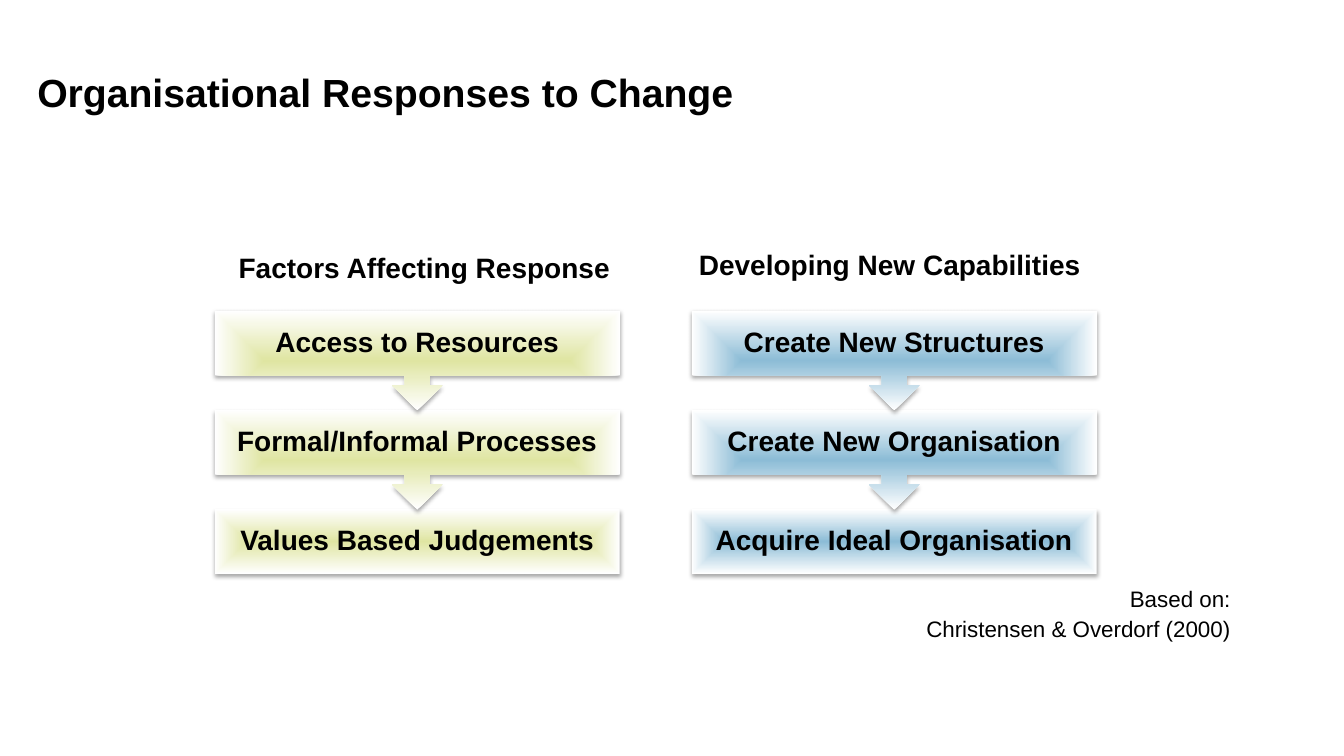
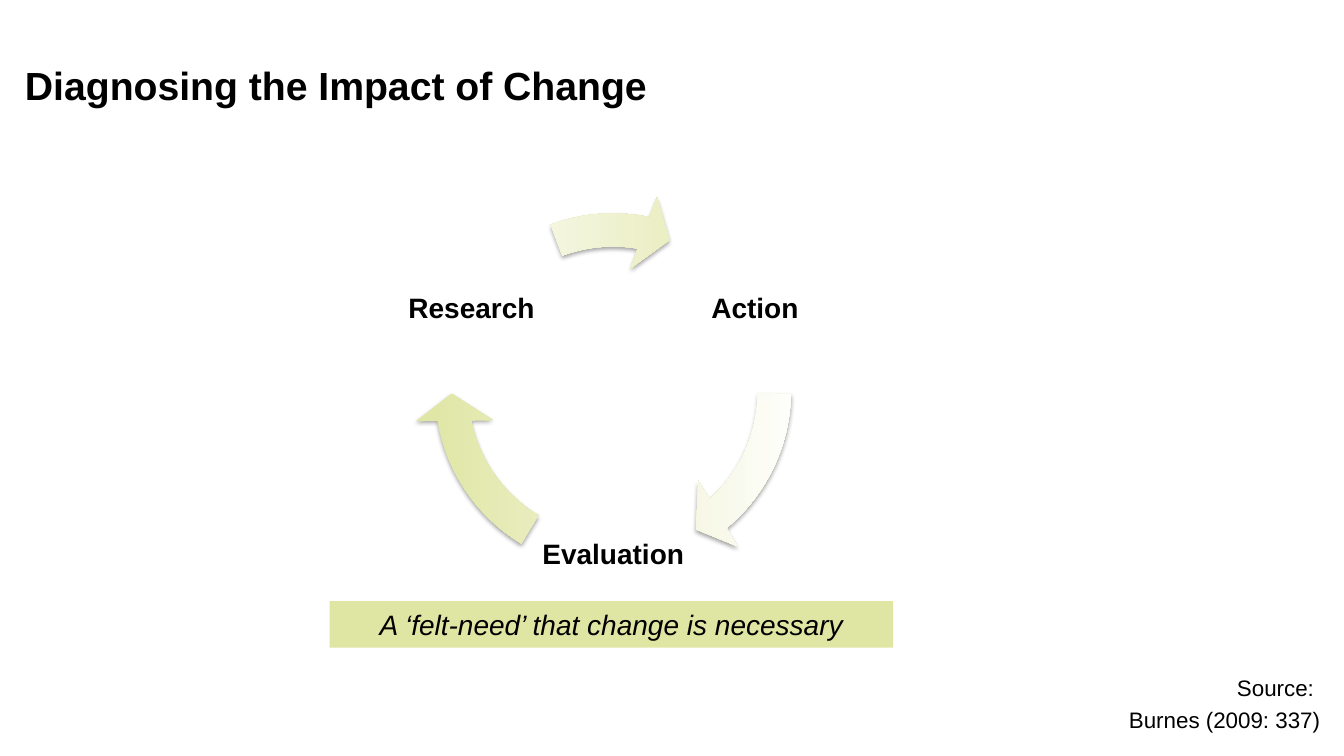
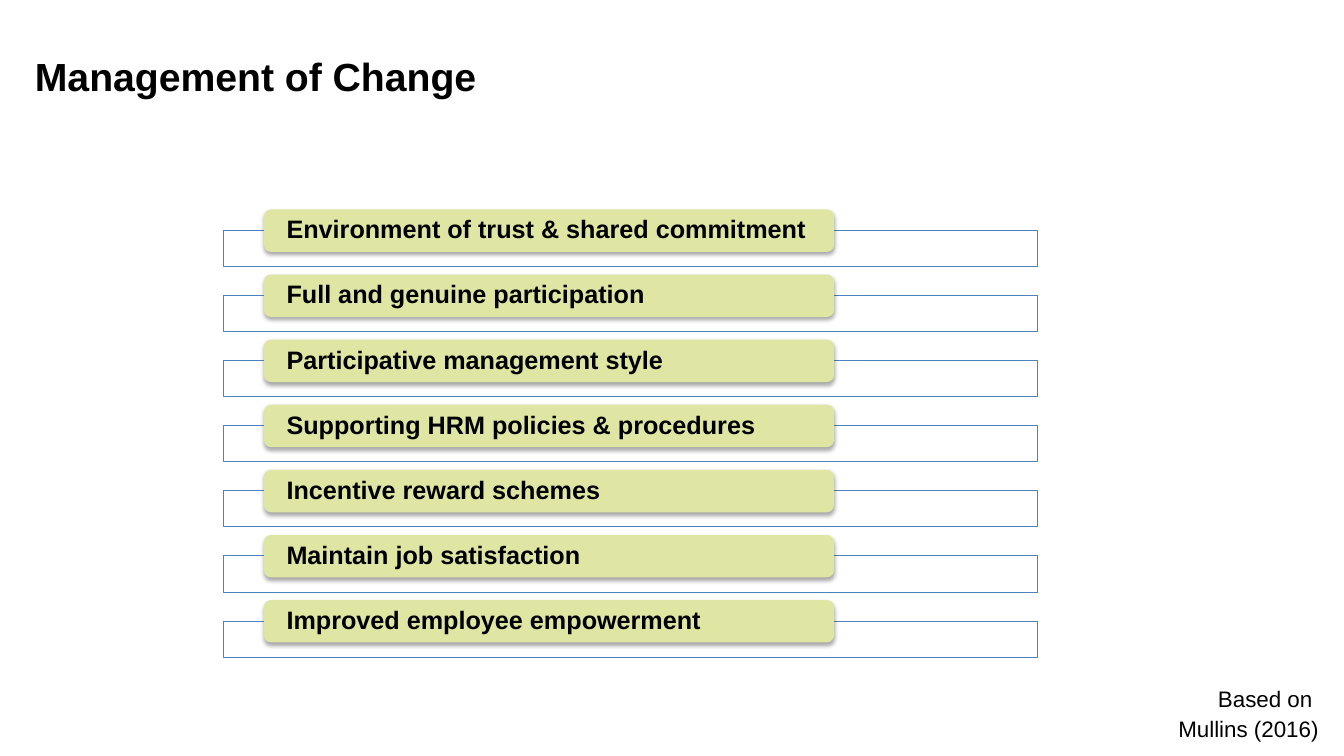
from dataclasses import dataclass
from typing import NamedTuple

from lxml import etree
from pptx import Presentation
from pptx.dml.color import RGBColor
from pptx.enum.shapes import MSO_SHAPE
from pptx.enum.text import MSO_ANCHOR, PP_ALIGN
from pptx.oxml.ns import qn
from pptx.util import Cm, Pt

RECT = MSO_SHAPE.RECTANGLE
ROUND = MSO_SHAPE.ROUNDED_RECTANGLE
CALL = MSO_SHAPE.UP_ARROW_CALLOUT
ARC = MSO_SHAPE.CIRCULAR_ARROW
LEFT, MID, RIGHT = PP_ALIGN.LEFT, PP_ALIGN.CENTER, PP_ALIGN.RIGHT
TOP, CENTRE = MSO_ANCHOR.TOP, MSO_ANCHOR.MIDDLE


# Theme
@dataclass(frozen=True)
class Theme:
    font: str = "Arial"
    ink: RGBColor = RGBColor(0x00, 0x00, 0x00)
    white: RGBColor = RGBColor(0xFF, 0xFF, 0xFF)
    lime: RGBColor = RGBColor(0xDF, 0xE5, 0xA2)
    sky: RGBColor = RGBColor(0x8C, 0xBC, 0xD6)
    edge: RGBColor = RGBColor(0x4F, 0x81, 0xBD)
    title: int = 28
    label: int = 20
    bar: int = 18
    note: int = 16


THEME = Theme()


# Parts, with lengths in centimetres
class Box(NamedTuple):
    x: float
    y: float
    w: float
    h: float


@dataclass(frozen=True)
class Style:
    size: int
    bold: bool = True
    slant: bool = False
    align: PP_ALIGN = LEFT
    anchor: MSO_ANCHOR = TOP
    inset: tuple[float, float] = (0.25, 0.13)
    lead: float = 1.0
    gap: float = 0


class Chain(NamedTuple):
    x: float
    color: RGBColor
    head: str
    spot: Box
    lead: float
    steps: tuple[str, ...]


class Sweep(NamedTuple):
    label: str
    x: float
    y: float
    start: float
    end: float
    angle: int


TITLE = Style(THEME.title)
STEP = Style(THEME.label, align=MID, anchor=CENTRE, inset=(0.41, 0.41), lead=0.9)
NODE = Style(THEME.label, align=MID, anchor=CENTRE, inset=(0.08, 0.08), lead=0.9)
STRIP = Style(THEME.label, bold=False, slant=True, align=MID, anchor=CENTRE)
BAR = Style(THEME.bar, anchor=CENTRE, inset=(0.52, 0), lead=0.9)


def write(shape, lines: tuple[str, ...], style: Style) -> None:
    frame = shape.text_frame
    frame.word_wrap = True
    frame.vertical_anchor = style.anchor
    frame.margin_left = frame.margin_right = Cm(style.inset[0])
    frame.margin_top = frame.margin_bottom = Cm(style.inset[1])
    for i, line in enumerate(lines):
        par = frame.add_paragraph() if i else frame.paragraphs[0]
        par.text = line
        par.alignment = style.align
        par.line_spacing = style.lead
        if i:
            par.space_before = Pt(style.gap)
        font = par.font
        font.name, font.size = THEME.font, Pt(style.size)
        font.bold, font.italic = style.bold, style.slant
        font.color.rgb = THEME.ink


def text(slide, box: Box, lines: tuple[str, ...], style: Style) -> None:
    write(slide.shapes.add_textbox(*map(Cm, box)), lines, style)


def draw(slide, kind: MSO_SHAPE, box: Box, color: RGBColor):
    shape = slide.shapes.add_shape(kind, *map(Cm, box))
    shape.shadow.inherit = False
    shape.fill.solid()
    shape.fill.fore_color.rgb = color
    shape.line.fill.background()
    return shape


def shade(shape) -> None:
    """Give the shape a soft shadow below it."""
    effects = shape._element.spPr.find(qn("a:effectLst"))
    outer = etree.SubElement(effects, qn("a:outerShdw"), blurRad="40000",
                             dist="23000", dir="5400000", rotWithShape="0")
    black = etree.SubElement(outer, qn("a:srgbClr"), val=str(THEME.ink))
    etree.SubElement(black, qn("a:alpha"), val="35000")


def blend(shape, color: RGBColor, angle: int = 0) -> None:
    """Fade the fill from the colour to white."""
    shape.fill.gradient()
    shape.fill.gradient_angle = angle
    for stop, tone in zip(shape.fill.gradient_stops, (color, THEME.white)):
        stop.color.rgb = tone


def glow(shape, color: RGBColor) -> None:
    """Fade from the middle of the shape out to its sides."""
    blend(shape, color)
    grad = shape._element.spPr.find(qn("a:gradFill"))
    grad.remove(grad.find(qn("a:lin")))
    way = etree.SubElement(grad, qn("a:path"), path="shape")
    etree.SubElement(way, qn("a:fillToRect"),
                     l="50000", t="50000", r="50000", b="50000")


def start(deck, title: str, x: float, y: float):
    slide = deck.slides.add_slide(deck.slide_layouts[6])
    text(slide, Box(x, y, 23, 2.69), (title,), TITLE)
    return slide


def cite(slide, right: float, y: float, lines: tuple[str, ...],
         lead: float = 1.0) -> None:
    style = Style(THEME.note, bold=False, align=RIGHT, lead=lead, gap=3)
    text(slide, Box(right - 9, y, 9, 1.7), lines, style)


# Slide 1: two chains of steps
CHAINS = (
    Chain(5.41, THEME.lime, "Factors Affecting Response",
          Box(4.98, 6.18, 11.43, 1.1), 1.0,
          ("Access to Resources", "Formal/Informal Processes",
           "Values Based Judgements")),
    Chain(17.43, THEME.sky, "Developing New Capabilities",
          Box(16.71, 6.17, 11.43, 1.1), 0.95,
          ("Create New Structures", "Create New Organisation",
           "Acquire Ideal Organisation")),
)


def chain(slide, part: Chain) -> None:
    wide, high, pitch, top = 10.21, 1.63, 2.5, 7.83
    text(slide, part.spot, (part.head,),
         Style(THEME.label, align=MID, lead=part.lead))
    last = len(part.steps) - 1
    for i in range(last, -1, -1):
        box = Box(part.x, top + i * pitch, wide, high)
        if i == last:
            shape = draw(slide, RECT, box, part.color)
        else:
            shape = draw(slide, CALL, box._replace(h=2.51), part.color)
            shape.rotation = 180
        glow(shape, part.color)
        shade(shape)
        text(slide, box, (part.steps[i],), STEP)


def respond(deck) -> None:
    slide = start(deck, "Organisational Responses to Change", 0.69, 1.59)
    for part in CHAINS:
        chain(slide, part)
    cite(slide, 31.26, 14.66, ("Based on:", "Christensen & Overdorf (2000)"), 0.95)


# Slide 2: a cycle of three, with angles in degrees
SWEEPS = (
    Sweep("Action", 16.89, 5.66, 0.88, 49.37, 0),
    Sweep("Evaluation", 13.32, 11.86, 121.02, 169.52, 0),
    Sweep("Research", 9.75, 5.66, 249.47, 280.92, 180),
)


def diagnose(deck) -> None:
    slide = start(deck, "Diagnosing the Impact of Change", 0.38, 1.42)
    ring = Box(10.42, 4.83, 10.06, 10.06)
    turn = 0.6  # adjustment units in one degree
    for part in SWEEPS:
        text(slide, Box(part.x, part.y, 4.27, 4.27), (part.label,), NODE)
        arc = draw(slide, ARC, ring, THEME.lime)
        sizes = (8.3 / 100, 9.61 * turn, part.end * turn,
                 part.start * turn, 9.6 / 100)
        for i, size in enumerate(sizes):
            arc.adjustments[i] = size
        blend(arc, THEME.lime, part.angle)
        shade(arc)
    strip = draw(slide, RECT, Box(8.31, 15.15, 14.2, 1.17), THEME.lime)
    write(strip, ("A ‘felt-need’ that change is necessary",), STRIP)
    cite(slide, 33.52, 16.87, ("Source: ", "Burnes (2009: 337)"))


# Slide 3: a list of bars
BARS = (
    "Environment of trust & shared commitment",
    "Full and genuine participation",
    "Participative management style",
    "Supporting HRM policies & procedures",
    "Incentive reward schemes",
    "Maintain job satisfaction",
    "Improved employee empowerment",
)


def manage(deck) -> None:
    slide = start(deck, "Management of Change", 0.63, 1.19)
    for i, line in enumerate(BARS):
        y = 5.28 + i * 1.64
        frame = draw(slide, RECT, Box(5.64, y + 0.53, 20.5, 0.91), THEME.white)
        frame.line.color.rgb = THEME.edge
        frame.line.width = Pt(0.75)
        bar = draw(slide, ROUND, Box(6.65, y, 14.37, 1.07), THEME.lime)
        shade(bar)
        write(bar, (line,), BAR)
    cite(slide, 33.48, 17.19, ("Based on ", "Mullins (2016)"), 0.95)


def main() -> None:
    deck = Presentation()
    deck.slide_width, deck.slide_height = Cm(33.87), Cm(19.05)
    for build in (respond, diagnose, manage):
        build(deck)
    deck.save("out.pptx")


if __name__ == "__main__":
    main()
